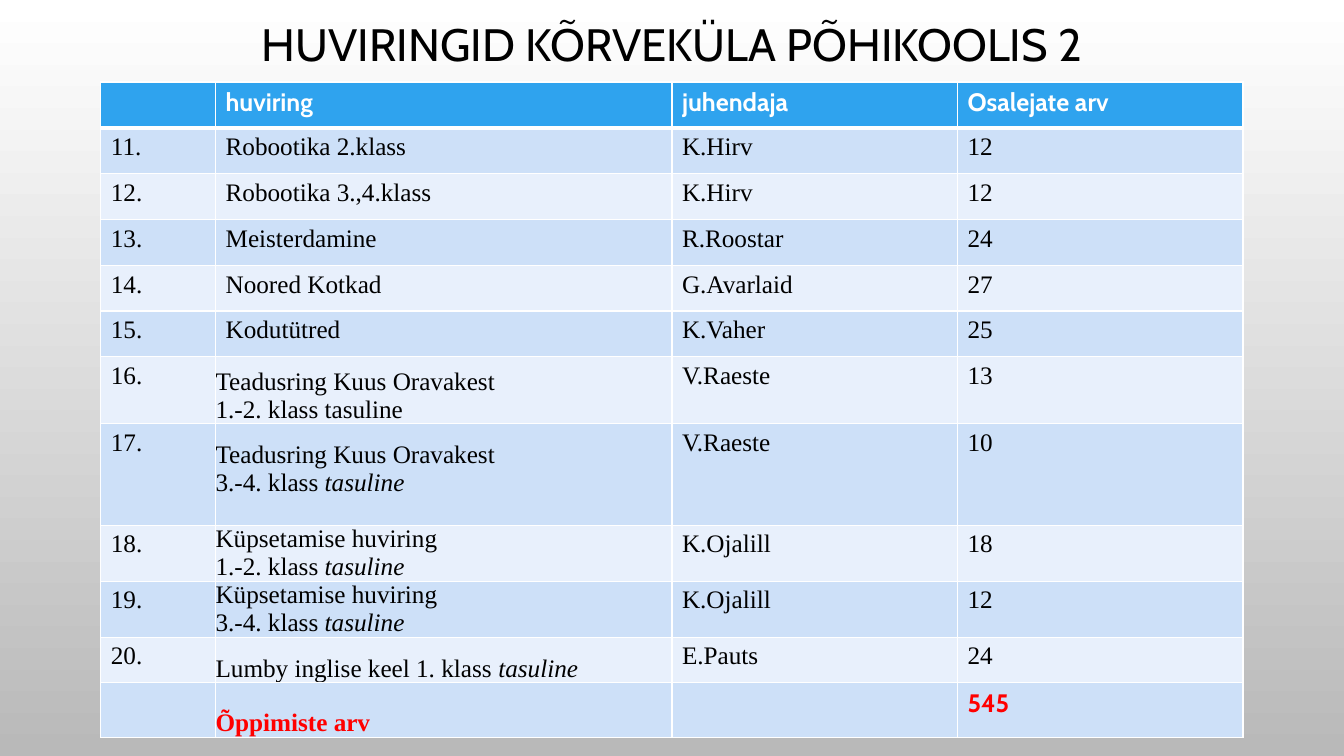
import pptx
import pptx.dml.color
import pptx.enum.text
import pptx.oxml
import pptx.oxml.ns
import pptx.util

Pt = pptx.util.Pt
ANCHOR = pptx.enum.text.MSO_ANCHOR
SANS, SERIF = "Cabin", "Times New Roman"
COL_WIDTHS = [82, 326, 204, 204]
ROW_HEIGHTS = [32.8, 32.8, 32.8, 32.8, 32.5, 32.5, 48, 72.5, 40, 40, 32.5, 39]
ROWS = [
    ["", "huviring", "juhendaja", "Osalejate arv"],
    ["11.", "Robootika 2.klass", "K.Hirv", "12"],
    ["12.", "Robootika 3.,4.klass", "K.Hirv", "12"],
    ["13.", "Meisterdamine", "R.Roostar", "24"],
    ["14.", "Noored Kotkad", "G.Avarlaid", "27"],
    ["15.", "Kodutütred", "K.Vaher", "25"],
    ["16.", "Teadusring Kuus Oravakest\v1.-2. klass tasuline", "V.Raeste", "13"],
    ["17.", "Teadusring Kuus Oravakest\v3.-4. klass |tasuline", "V.Raeste", "10"],
    ["18.", "Küpsetamise huviring\v1.-2. klass |tasuline", "K.Ojalill", "18"],
    ["19.", "Küpsetamise huviring\v3.-4. klass |tasuline", "K.Ojalill", "12"],
    ["20.", "Lumby inglise keel 1. klass |tasuline", "E.Pauts", "24"],
    ["", "Õppimiste arv", "", "545"],
]
FIRST_TIGHT_ROW = 6
RAISED_ROW = 7
TOTAL_ROW = len(ROWS) - 1


def rgb(color):
    return pptx.dml.color.RGBColor.from_string(color)


def format_font(font, name, size, color, bold=False):
    font.name = name
    font.size = Pt(size)
    font.bold = bold
    font.color.rgb = rgb(color)


def set_background(s):
    fill = s.background.fill
    fill.gradient()
    fill.gradient_angle = 270
    for stop, color, position in zip(fill.gradient_stops, ["FFFFFF", "B9B9B9"], [0, 1]):
        stop.color.rgb = rgb(color)
        stop.position = position


def add_title(s, left, top, width, height):
    sp = s.shapes.title
    sp.left, sp.top, sp.width, sp.height = Pt(left), Pt(top), Pt(width), Pt(height)
    tf = sp.text_frame
    tf.text = "HUVIRINGID KÕRVEKÜLA PÕHIKOOLIS 2"
    tf.auto_size = pptx.enum.text.MSO_AUTO_SIZE.NONE
    tf.word_wrap = True
    tf.vertical_anchor = ANCHOR.MIDDLE
    p = tf.paragraphs[0]
    p.alignment = pptx.enum.text.PP_ALIGN.CENTER
    p.line_spacing = 0.9
    format_font(p.runs[0].font, SANS, 32.4, "000000")


def add_borders(cell, top, bottom):
    tc_pr = cell._tc.get_or_add_tcPr()
    for side, width in [("L", 1), ("R", 1), ("T", top), ("B", bottom)]:
        tc_pr.append(pptx.oxml.parse_xml(
            f'<a:ln{side} {pptx.oxml.ns.nsdecls("a")} w="{Pt(width)}">'
            f'<a:solidFill><a:srgbClr val="FFFFFF"/></a:solidFill></a:ln{side}>'))


def fill_cell(cell, text, row, col):
    add_borders(cell, 3 if row == 1 else 1, 3 if row == 0 else 1)
    cell.fill.solid()
    cell.fill.fore_color.rgb = rgb("2FA3EE" if row == 0 else ["E8F0FC", "CDE0F8"][row % 2])
    if col == 1 and row >= FIRST_TIGHT_ROW:
        cell.vertical_anchor = ANCHOR.BOTTOM
        cell.margin_left = cell.margin_right = cell.margin_top = 0
        cell.margin_bottom = Pt(20) if row == RAISED_ROW else 0
    if not text:
        return
    plain, _, italic = text.partition("|")
    p = cell.text_frame.paragraphs[0]
    p.text = plain
    if italic:
        r = p.add_run()
        r.text = italic
        r.font.italic = True
    sans = row == 0 or (row == TOTAL_ROW and col == 3)
    color = {0: "FFFFFF", TOTAL_ROW: "FF0000"}.get(row, "000000")
    for r in p.runs:
        format_font(r.font, SANS if sans else SERIF, 18, color, row in (0, TOTAL_ROW))


def add_club_table(s, left, top):
    table = s.shapes.add_table(
        len(ROWS), len(COL_WIDTHS), Pt(left), Pt(top),
        Pt(sum(COL_WIDTHS)), Pt(sum(ROW_HEIGHTS))).table
    for column, width in zip(table.columns, COL_WIDTHS):
        column.width = Pt(width)
    for row, texts in enumerate(ROWS):
        table.rows[row].height = Pt(ROW_HEIGHTS[row])
        for col, text in enumerate(texts):
            fill_cell(table.cell(row, col), text, row, col)


def main():
    prs = pptx.Presentation()
    prs.slide_width, prs.slide_height = Pt(960), Pt(540)
    s = prs.slides.add_slide(prs.slide_layouts.get_by_name("Title Only"))
    set_background(s)
    add_title(s, 72, 18.5, 816, 30)
    add_club_table(s, 72, 58.5)
    prs.save("out.pptx")


if __name__ == "__main__":
    main()
